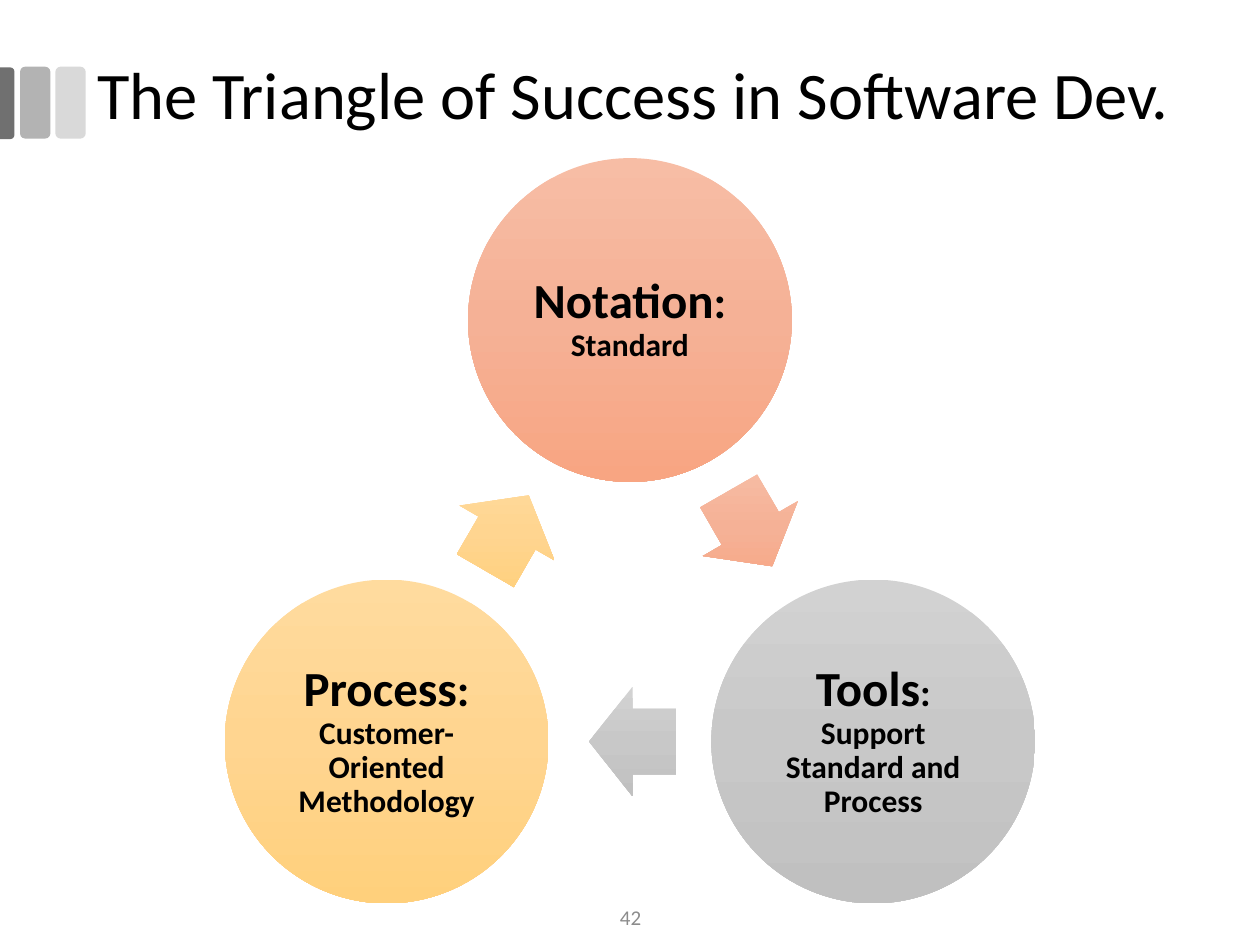
from math import cos, radians, sin

from lxml import etree
from pptx import Presentation
from pptx.dml.color import RGBColor
from pptx.enum.shapes import MSO_SHAPE as Shape
from pptx.enum.text import MSO_ANCHOR as Anchor, MSO_AUTO_SIZE as AutoSize, PP_ALIGN as Align
from pptx.oxml import parse_xml
from pptx.oxml.ns import nsdecls
from pptx.util import Inches, Pt

FONT = "Calibri"
COLORS = {
    "text": "000000",
    "number": "8C8C8C",
    "light": "D9D9D9",
    "medium": "B3B3B3",
    "dark": "707070",
}
GRADIENTS = {
    "orange": ("F7BDA5", "F5B196", "F8A582"),
    "gray": ("D2D2D2", "C8C8C8", "C0C0C0"),
    "yellow": ("FFDB9E", "FFD590", "FFD07C"),
}
TITLE = "The Triangle of Success in Software Dev."
SLIDE_NUMBER = "42"
STEPS = [
    ("orange", [("Notation", 28), (": ", 26), ("Standard", 18)]),
    ("gray", [("Tools", 28), (": ", 22), ("Support Standard and Process", 18)]),
    ("yellow", [("Process", 28), (": ", 26), ("Customer-Oriented Methodology", 18)]),
]
TABS = [
    (Shape.ROUNDED_RECTANGLE, 0.44, 0.53, 0.24, 0.57, 0, "light"),
    (Shape.ROUNDED_RECTANGLE, 0.16, 0.53, 0.24, 0.57, 0, "medium"),
    (Shape.ROUND_2_SAME_RECTANGLE, -0.23, 0.76, 0.57, 0.12, 90, "dark"),
]
CENTER_X, CENTER_Y, RADIUS = 5, 4.77, 2.23
CIRCLE_SIZE = 2.57
ARROW_WIDTH, ARROW_HEIGHT, ARROW_SHIFT = 0.69, 0.87, 0.02


def add_run(paragraph, text, size, color, bold=False):
    run = paragraph.add_run()
    run.text = text
    font = run.font
    font.name, font.size, font.bold = FONT, Pt(size), bold
    font.color.rgb = RGBColor.from_string(COLORS[color])


def add_plain_shape(slide, kind, left, top, width, height, rotation=0):
    shape = slide.shapes.add_shape(kind, Inches(left), Inches(top), Inches(width), Inches(height))
    shape.shadow.inherit = False
    shape.line.fill.background()
    shape.rotation = rotation
    return shape


def add_gradient_shape(slide, kind, center, width, height, gradient, rotation=0):
    x, y = center
    shape = add_plain_shape(slide, kind, x - width / 2, y - height / 2, width, height, rotation)
    fill = parse_xml(f'<a:gradFill {nsdecls("a")} rotWithShape="0"><a:gsLst/><a:lin ang="5400000" scaled="0"/></a:gradFill>')
    for position, color in zip((0, 50000, 100000), GRADIENTS[gradient]):
        stop = etree.SubElement(fill[0], fill[0].tag.replace("gsLst", "gs"), pos=str(position))
        etree.SubElement(stop, stop.tag.replace("}gs", "}srgbClr"), val=color)
    shape.element.spPr.find(fill[0].tag.replace("gsLst", "prstGeom")).addnext(fill)
    return shape


def add_circle(slide, center, gradient, runs):
    circle = add_gradient_shape(slide, Shape.OVAL, center, CIRCLE_SIZE, CIRCLE_SIZE, gradient)
    frame = circle.text_frame
    frame.word_wrap = True
    frame.vertical_anchor = Anchor.MIDDLE
    frame.margin_left = frame.margin_right = frame.margin_top = frame.margin_bottom = Inches(0.04)
    paragraph = frame.paragraphs[0]
    paragraph.alignment = Align.CENTER
    paragraph.line_spacing = 0.9
    for text, size in runs:
        add_run(paragraph, text, size, "text", bold=True)


def add_arrow(slide, start, end, gradient, rotation):
    angle = radians(rotation)
    center = (
        (start[0] + end[0]) / 2 - ARROW_SHIFT * cos(angle),
        (start[1] + end[1]) / 2 - ARROW_SHIFT * sin(angle),
    )
    arrow = add_gradient_shape(
        slide, Shape.RIGHT_ARROW, center, ARROW_WIDTH, ARROW_HEIGHT, gradient, rotation
    )
    arrow.adjustments[0], arrow.adjustments[1] = 0.6, 0.5


def add_title(slide):
    title = slide.shapes.title
    title.left, title.top, title.width, title.height = map(Inches, (0.67, 0.42, 9.53, 0.71))
    frame = title.text_frame
    frame.word_wrap = True
    frame.auto_size = AutoSize.NONE
    frame.vertical_anchor = Anchor.MIDDLE
    paragraph = frame.paragraphs[0]
    paragraph.alignment = Align.LEFT
    paragraph.line_spacing = 0.9
    add_run(paragraph, TITLE, 38, "text")


def add_slide_number(slide):
    box = slide.shapes.add_textbox(Inches(3.88), Inches(7.08), Inches(2.25), Inches(0.4))
    frame = box.text_frame
    frame.word_wrap = True
    frame.vertical_anchor = Anchor.MIDDLE
    paragraph = frame.paragraphs[0]
    paragraph.alignment = Align.CENTER
    add_run(paragraph, SLIDE_NUMBER, 12, "number")


def main():
    presentation = Presentation()
    presentation.slide_width, presentation.slide_height = Inches(10), Inches(7.5)
    slide = presentation.slides.add_slide(presentation.slide_layouts[5])
    for kind, left, top, width, height, rotation, color in TABS:
        tab = add_plain_shape(slide, kind, left, top, width, height, rotation)
        tab.fill.solid()
        tab.fill.fore_color.rgb = RGBColor.from_string(COLORS[color])
        if kind == Shape.ROUND_2_SAME_RECTANGLE:
            tab.adjustments[0] = 0.29
    add_title(slide)
    turn = 360 / len(STEPS)
    centers = [
        (CENTER_X + RADIUS * sin(radians(i * turn)), CENTER_Y - RADIUS * cos(radians(i * turn)))
        for i in range(len(STEPS))
    ]
    for i, (gradient, runs) in enumerate(STEPS):
        add_circle(slide, centers[i], gradient, runs)
        add_arrow(slide, centers[i], centers[(i + 1) % len(STEPS)], gradient, (i + 0.5) * turn)
    add_slide_number(slide)
    presentation.save("out.pptx")


if __name__ == "__main__":
    main()
